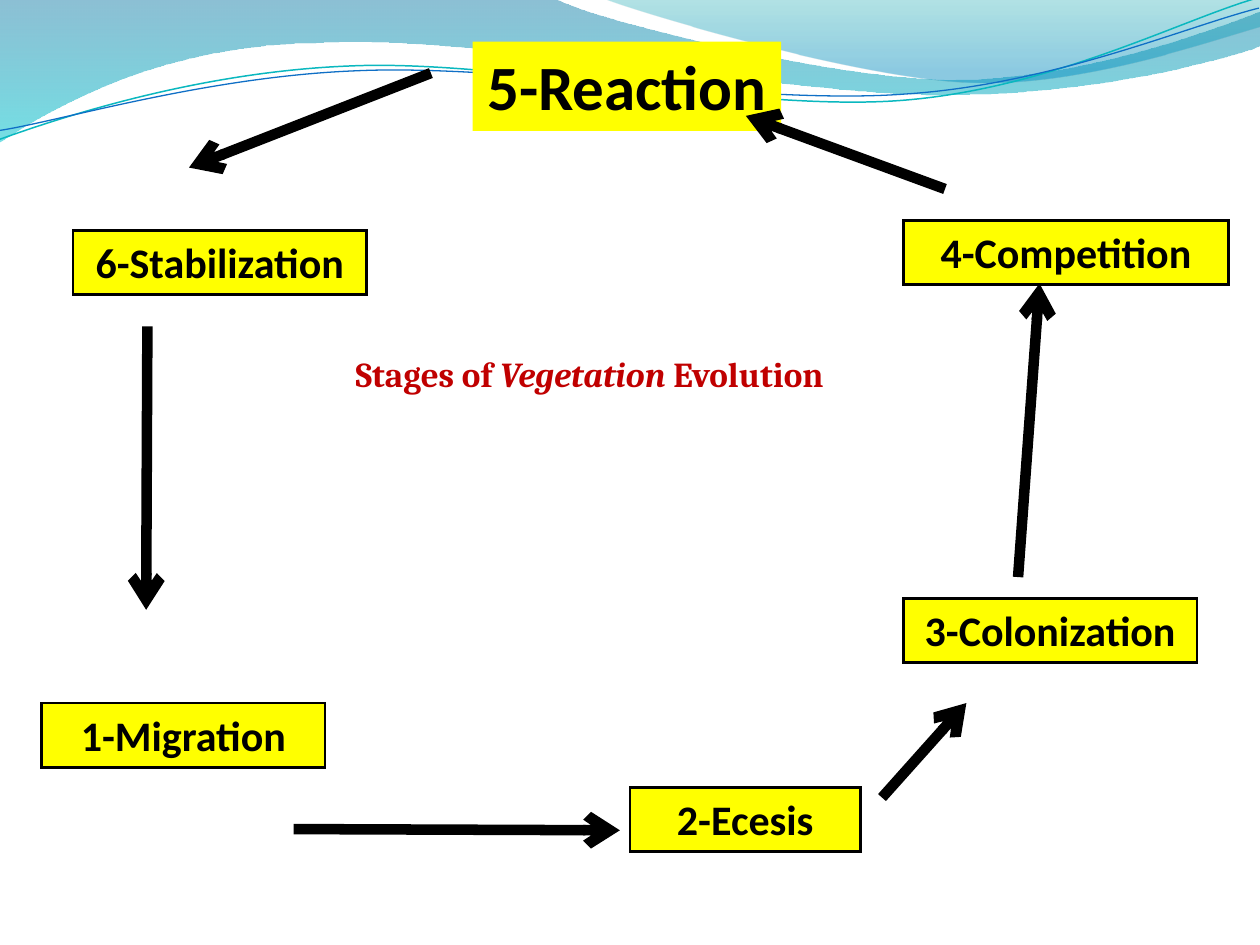
from lxml import etree
from pptx import Presentation
from pptx.dml.color import RGBColor
from pptx.enum.shapes import MSO_CONNECTOR, MSO_SHAPE
from pptx.enum.text import MSO_ANCHOR, MSO_AUTO_SIZE, PP_ALIGN
from pptx.oxml.ns import qn
from pptx.util import Inches, Pt

RECT = MSO_SHAPE.RECTANGLE
LINE = MSO_CONNECTOR.STRAIGHT
TOP = MSO_ANCHOR.TOP
GROW = MSO_AUTO_SIZE.SHAPE_TO_FIT_TEXT
CENTER = PP_ALIGN.CENTER
COLORS = {
    "box": "FFFF00", "ink": "000000", "title": "C00000",
    "deep": "0074A1", "cyan": "00C6CF", "teal": "00A1A9", "sky": "008BBF",
    "aqua": "0AB8BF", "blue": "0F6FC6",
}
RGB = {name: RGBColor.from_string(code) for name, code in COLORS.items()}


def add_wave(start, parts, close):
    path = slide.shapes.build_freeform(Inches(start[0]), Inches(start[1]))
    points = [(Inches(x), Inches(y)) for part in parts for x, y in part]
    path.add_line_segments(points, close=close)
    wave = path.convert_to_shape()
    wave.shadow.inherit = False
    legs = iter(list(wave._element.iter(qn("a:lnTo"))))
    for part in parts:
        group = [next(legs) for point in part]
        if len(group) == 3:
            curve = etree.Element(qn("a:cubicBezTo"))
            group[0].addprevious(curve)
            for leg in group:
                curve.append(leg[0])
                leg.getparent().remove(leg)
    return wave


def add_text(frame, runs, size, font, color):
    frame.vertical_anchor = TOP
    frame.auto_size = GROW
    para = frame.paragraphs[0]
    para.alignment = CENTER
    for text, italic in runs:
        run = para.add_run()
        run.text = text
        run.font.size = Pt(size)
        run.font.name = font
        run.font.bold = True
        run.font.italic = italic
        run.font.color.rgb = RGB[color]


prs = Presentation()
prs.slide_width = Inches(10)
prs.slide_height = Inches(7.5)
slide = prs.slides.add_slide(prs.slide_layouts[6])

bands = [
    ((0, -0.01), [
        [(4.4, -0.01)],
        [(4.76, 0.17), (6.64, 0.63), (7.58, 0.63)],
        [(8.53, 0.63), (9.58, 0.26), (10, 0.09)],
        [(10.01, 0.36)],
        [(9.83, 0.44), (8.7, 0.76), (7.46, 0.75)],
        [(6.22, 0.75), (3.82, 0.28), (2.57, 0.34)],
        [(1.29, 0.35), (0.46, 0.83), (-0.01, 1.13)],
        [(0, -0.01)],
    ], [(0, "deep", 45), (1, "cyan", 55)]),
    ((4.79, -0.01), [
        [(5.09, 0.11), (6.82, 0.62), (7.69, 0.65)],
        [(8.56, 0.69), (9.61, 0.32), (10, 0.21)],
        [(10, 0)],
        [(4.79, -0.01)],
    ], [(0, "teal", 30), (0.8, "sky", 45)]),
]
for start, parts, stops in bands:
    band = add_wave(start, parts, True)
    band.line.fill.background()
    band.fill.gradient()
    band.fill.gradient_angle = 270
    for stop, (pos, color, alpha) in zip(band.fill.gradient_stops, stops):
        stop.position = pos
        stop.color.rgb = RGB[color]
    tones = band.fill._xPr.iter(qn("a:srgbClr"))
    for tone, (pos, color, alpha) in zip(tones, stops):
        etree.SubElement(tone, qn("a:alpha"), val=str(alpha * 1000))

curves = [
    ((-0.02, 0.87), [
        [(0.47, 0.72), (1.58, 0.41), (2.78, 0.42)],
        [(3.96, 0.42), (5.91, 0.93), (7.12, 0.9)],
        [(8.32, 0.87), (9.4, 0.36), (10, 0.22)],
    ], "aqua", 0.85),
    ((-0.02, 0.8), [
        [(0.46, 0.75), (1.64, 0.45), (2.83, 0.46)],
        [(4.03, 0.46), (5.96, 0.88), (7.16, 0.85)],
        [(8.35, 0.83), (9.42, 0.42), (10.01, 0.3)],
    ], "blue", 0.75),
]
for start, parts, color, width in curves:
    curve = add_wave(start, parts, False)
    curve.rotation = 357.3
    curve.fill.background()
    curve.line.color.rgb = RGB[color]
    curve.line.width = Pt(width)

stages = [
    ("1-Migration", 0.33, 5.58, 2.25, 0.51, 24),
    ("2-Ecesis", 5, 6.25, 1.83, 0.51, 24),
    ("3-Colonization", 7.17, 4.75, 2.33, 0.51, 24),
    ("4-Competition", 7.17, 1.75, 2.58, 0.51, 24),
    ("5-Reaction", 3.75, 0.33, 2.45, 0.71, 36),
    ("6-Stabilization", 0.58, 1.83, 2.33, 0.51, 24),
]
for text, x, y, w, h, size in stages:
    box = slide.shapes.add_shape(RECT, Inches(x), Inches(y), Inches(w), Inches(h))
    box.shadow.inherit = False
    box.fill.solid()
    box.fill.fore_color.rgb = RGB["box"]
    if size == 24:
        box.line.color.rgb = RGB["ink"]
        box.line.width = Pt(1.5)
        etree.SubElement(box.line._get_or_add_ln(), qn("a:miter"), lim="800000")
    else:
        box.line.fill.background()
    box.text_frame.word_wrap = size == 24
    add_text(box.text_frame, [(text, False)], size, "Calibri", "ink")

arrows = [
    (2.33, 6.58, 4.92, 6.59),
    (7, 6.33, 7.67, 5.58),
    (8.08, 4.58, 8.25, 2.25),
    (7.5, 1.5, 5.92, 0.92),
    (3.42, 0.58, 1.5, 1.33),
    (1.17, 2.59, 1.16, 4.84),
]
for ends in arrows:
    arrow = slide.shapes.add_connector(LINE, *[Inches(n) for n in ends])
    arrow.line.color.rgb = RGB["ink"]
    arrow.line.width = Pt(6)
    etree.SubElement(arrow.line._get_or_add_ln(), qn("a:tailEnd"), type="arrow")
    etree.SubElement(arrow._element.spPr, qn("a:effectLst"))

title = slide.shapes.add_textbox(Inches(2.5), Inches(2.75), Inches(4.42), Inches(0.44))
title.text_frame.word_wrap = True
words = [("Stages of ", False), ("Vegetation", True), (" Evolution ", False)]
add_text(title.text_frame, words, 20, "Cambria", "title")

prs.save("out.pptx")
